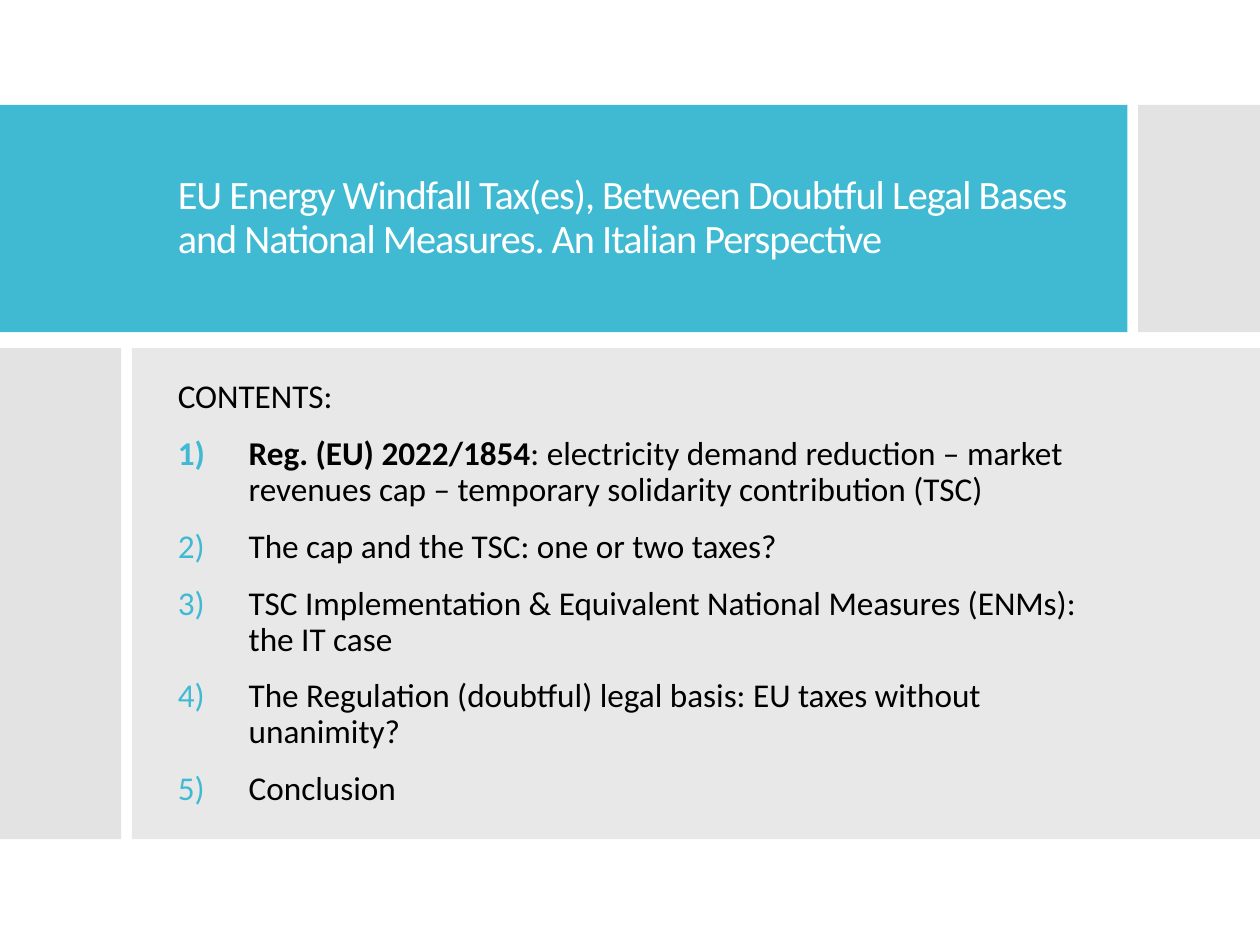
from lxml.etree import SubElement
from pptx import Presentation
from pptx.dml.color import RGBColor
from pptx.enum.shapes import MSO_SHAPE
from pptx.enum.text import MSO_ANCHOR, PP_ALIGN
from pptx.oxml.ns import qn
from pptx.util import Pt

COLORS = {"accent": "40BAD2", "side": "C8C8C8", "panel": "D9D9D9",
          "white": "FFFFFF", "black": "000000"}
FONT = "Calibri"
TITLE = ("EU Energy Windfall Tax(es), Between Doubtful Legal Bases "
         "and National Measures. An Italian Perspective")
HEADING = "CONTENTS:"
ITEMS = [
    [("Reg. (EU) 2022/1854", True),
     (": electricity demand reduction – market revenues cap – "
      "temporary solidarity contribution (TSC)", False)],
    [("The cap and the TSC: one or two taxes?", False)],
    [("TSC Implementation & Equivalent National Measures (ENMs): the IT case", False)],
    [("The Regulation (doubtful) legal basis: EU taxes without unanimity?", False)],
    [("Conclusion", False)],
]

WIDTH, HEIGHT = 720, 540
TOP_ROW = (59.9, 130)
BOTTOM_ROW = (198.9, 280.7)
BANDS = [
    (0, 644.2, TOP_ROW, "accent", 100),
    (650.4, WIDTH, TOP_ROW, "side", 50),
    (0, 69.2, BOTTOM_ROW, "side", 50),
    (75.4, WIDTH, BOTTOM_ROW, "panel", 60),
]
TEXT_LEFT, TEXT_WIDTH = 94.5, 531
INDENT = 40.5


def add_band(slide, left, right, row, color, opacity):
    top, height = row
    shape = slide.shapes.add_shape(
        MSO_SHAPE.RECTANGLE, Pt(left), Pt(top), Pt(right - left), Pt(height))
    shape.shadow.inherit = False
    shape.line.fill.background()
    shape.fill.solid()
    shape.fill.fore_color.rgb = RGBColor.from_string(COLORS[color])
    if opacity < 100:
        fill_color = shape.fill._xPr.find(qn("a:solidFill"))[0]
        SubElement(fill_color, qn("a:alpha")).set("val", str(opacity * 1000))


def add_text_frame(slide, top, height):
    box = slide.shapes.add_textbox(Pt(TEXT_LEFT), Pt(top), Pt(TEXT_WIDTH), Pt(height))
    frame = box.text_frame
    frame.word_wrap = True
    frame.vertical_anchor = MSO_ANCHOR.MIDDLE
    return frame


def format_paragraph(paragraph, space_before=0):
    paragraph.alignment = PP_ALIGN.LEFT
    paragraph.line_spacing = 0.9
    paragraph.space_before = Pt(space_before)


def add_run(paragraph, text, size, color, bold=False):
    run = paragraph.add_run()
    run.text = text
    run.font.name = FONT
    run.font.size = Pt(size)
    run.font.bold = bold
    run.font.color.rgb = RGBColor.from_string(COLORS[color])
    return run


def number_paragraph(paragraph):
    properties = paragraph._p.get_or_add_pPr()
    properties.set("marL", str(Pt(INDENT)))
    properties.set("indent", str(-Pt(INDENT)))
    bullet_color = SubElement(properties, qn("a:buClr"))
    SubElement(bullet_color, qn("a:srgbClr")).set("val", COLORS["accent"])
    SubElement(properties, qn("a:buFont")).set("typeface", FONT)
    SubElement(properties, qn("a:buAutoNum")).set("type", "arabicParenR")


def main():
    presentation = Presentation()
    presentation.slide_width, presentation.slide_height = Pt(WIDTH), Pt(HEIGHT)
    slide = presentation.slides.add_slide(presentation.slide_layouts[6])
    for band in BANDS:
        add_band(slide, *band)

    title = add_text_frame(slide, 85.7, 78.5).paragraphs[0]
    format_paragraph(title)
    title_run = add_run(title, TITLE, 23, "white")
    title_run.font._element.set("spc", "-60")

    contents = add_text_frame(slide, 199.4, 280)
    heading = contents.paragraphs[0]
    format_paragraph(heading, 12)
    add_run(heading, HEADING, 19, "black")
    for item in ITEMS:
        paragraph = contents.add_paragraph()
        format_paragraph(paragraph, 12)
        number_paragraph(paragraph)
        for text, bold in item:
            add_run(paragraph, text, 19, "black", bold)

    presentation.save("out.pptx")


if __name__ == "__main__":
    main()
